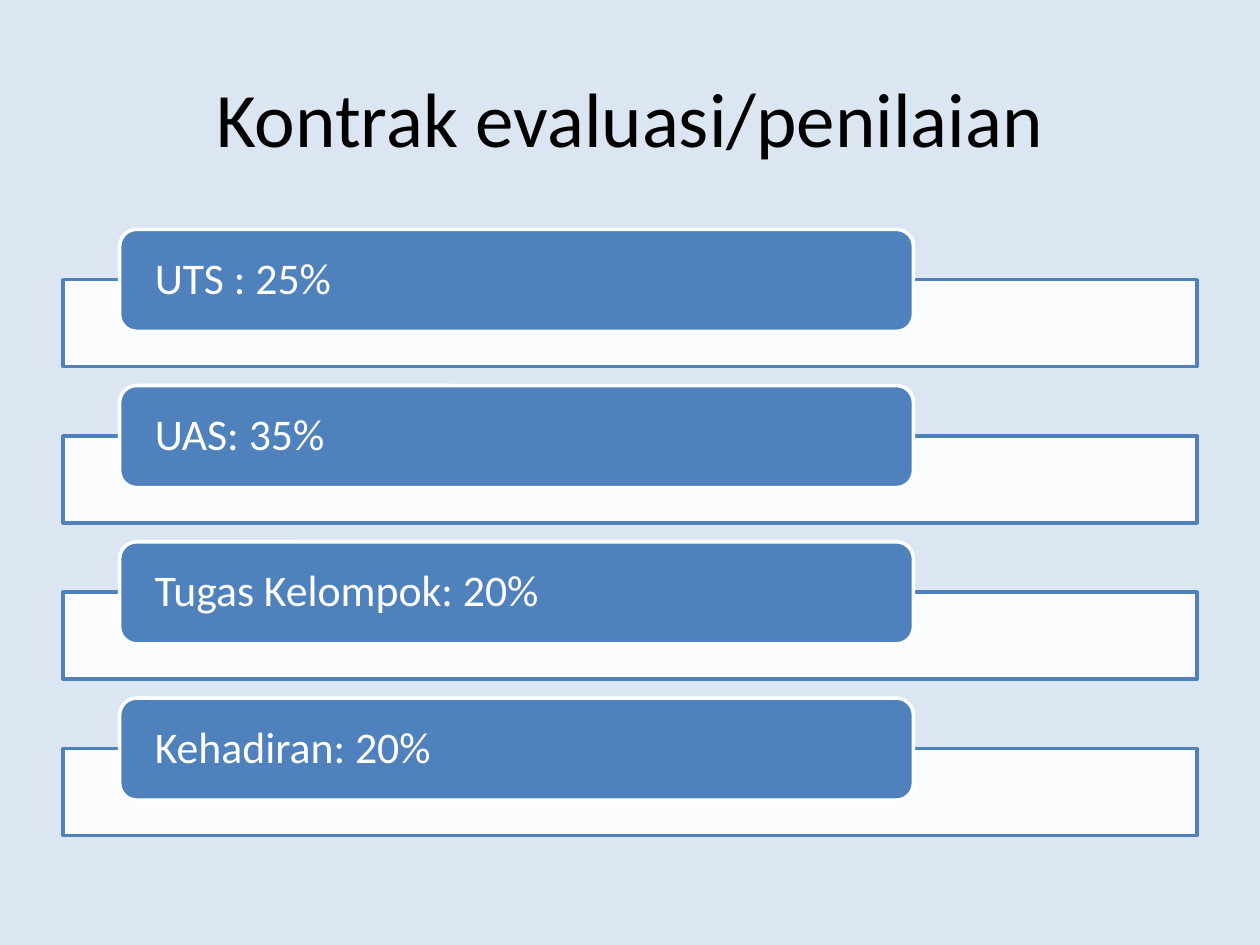
"""Build the slide of grading weights as a list of labelled bars."""
from lxml import etree
from pptx import Presentation
from pptx.dml.color import RGBColor
from pptx.enum.shapes import MSO_SHAPE
from pptx.enum.text import MSO_ANCHOR, PP_ALIGN
from pptx.oxml.ns import qn
from pptx.util import Inches, Pt

RECT, ROUND = MSO_SHAPE.RECTANGLE, MSO_SHAPE.ROUNDED_RECTANGLE
MIDDLE = MSO_ANCHOR.MIDDLE
LEFT, CENTER = PP_ALIGN.LEFT, PP_ALIGN.CENTER
PALE = RGBColor(0xDC, 0xE6, 0xF2)
BLUE = RGBColor(0x4F, 0x81, 0xBD)
WHITE = RGBColor(0xFF, 0xFF, 0xFF)
BLACK = RGBColor(0x00, 0x00, 0x00)
FONT = "Calibri"
MARGIN, WIDTH = 0.5, 9
TOP, PITCH = 1.82, 1.24
ITEMS = ["UTS : 25%", "UAS: 35%", "Tugas Kelompok: 20%", "Kehadiran: 20%"]


def write(frame, text, size, color, align):
    """Fill a text frame with one formatted, vertically centred line."""
    frame.text = text
    frame.word_wrap = True
    frame.vertical_anchor = MIDDLE
    line = frame.paragraphs[0]
    line.alignment = align
    font = line.runs[0].font
    font.name, font.size, font.color.rgb = FONT, Pt(size), color


def add_box(shapes, kind, box, fill, edge):
    """Add a flat filled shape with a two-point outline."""
    shape = shapes.add_shape(kind, *map(Inches, box))
    shape.shadow.inherit = False
    shape.fill.solid()
    shape.fill.fore_color.rgb = fill
    shape.line.color.rgb = edge
    shape.line.width = Pt(2)
    return shape


def fade(shape, share):
    """Set the opacity of a solid fill in percent."""
    color = shape.fill._xPr.find(qn("a:solidFill"))[0]
    etree.SubElement(color, qn("a:alpha")).set("val", str(share * 1000))


def add_item(shapes, top, text):
    """Add a wide frame with its label overlapping the upper edge."""
    frame = add_box(shapes, RECT, (MARGIN, top + 0.4, WIDTH, 0.69), WHITE, BLUE)
    fade(frame, 90)
    box = (MARGIN + WIDTH * 0.05, top, WIDTH * 0.7, 0.81)
    label = add_box(shapes, ROUND, box, BLUE, WHITE)
    body = label.text_frame
    write(body, text, 25, WHITE, LEFT)
    body.paragraphs[0].line_spacing = 0.9
    body.margin_left = body.margin_right = Inches(0.24)
    body.margin_top = body.margin_bottom = 0


def add_title(slide, text):
    """Place and format the slide title."""
    title = slide.shapes.title
    title.left, title.top = Inches(MARGIN), Inches(0.3)
    title.width, title.height = Inches(WIDTH), Inches(1.25)
    write(title.text_frame, text, 44, BLACK, CENTER)


def main():
    """Build and save the slide."""
    deck = Presentation()
    deck.slide_width, deck.slide_height = Inches(10), Inches(7.5)
    slide = deck.slides.add_slide(deck.slide_layouts[5])
    slide.background.fill.solid()
    slide.background.fill.fore_color.rgb = PALE
    add_title(slide, "Kontrak evaluasi/penilaian")
    group = slide.shapes.add_group_shape()
    for row, text in enumerate(ITEMS):
        add_item(group.shapes, TOP + row * PITCH, text)
    deck.save("out.pptx")


if __name__ == "__main__":
    main()
